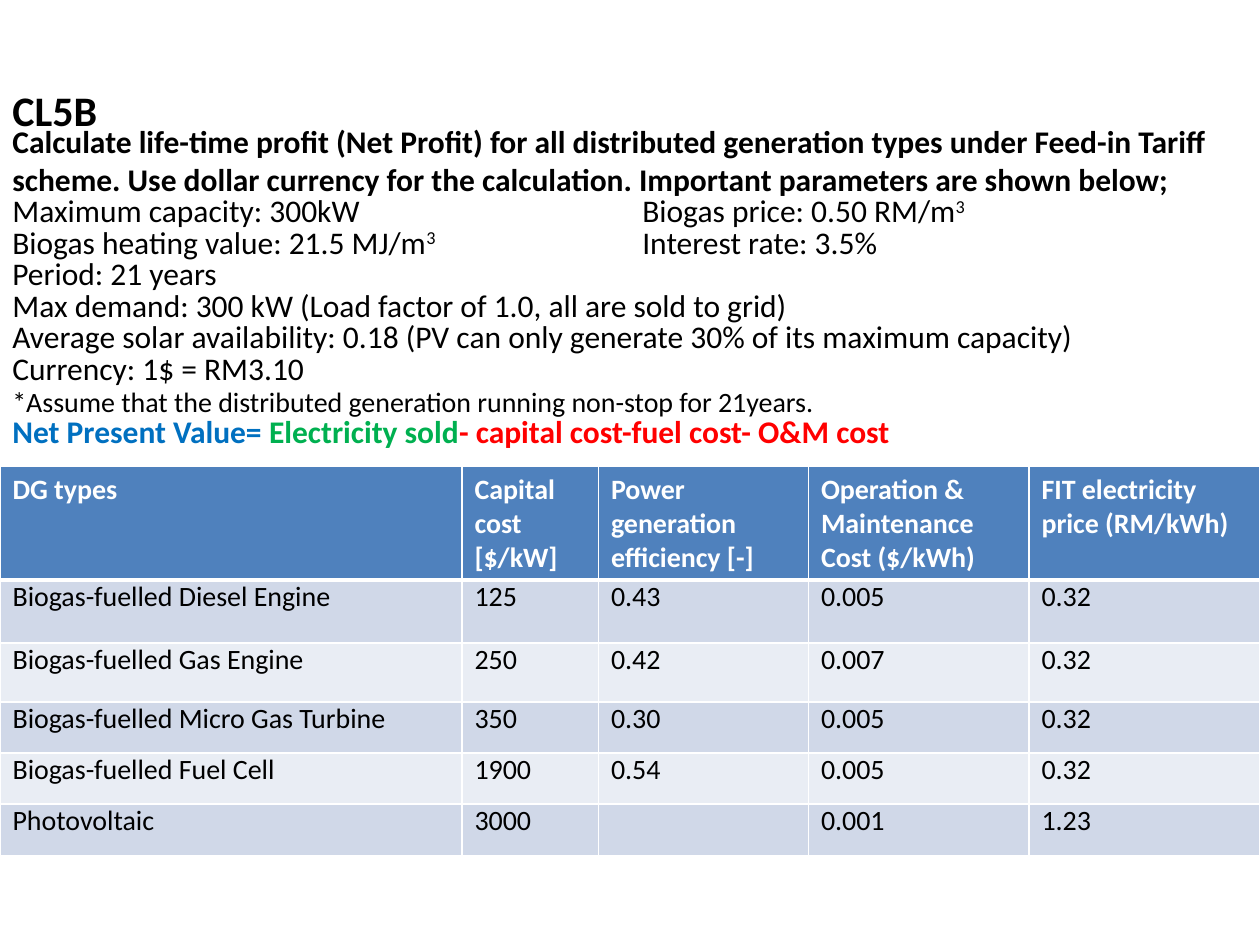
from lxml import etree
from pptx import Presentation
from pptx.dml.color import RGBColor
from pptx.enum.text import MSO_ANCHOR
from pptx.oxml.ns import qn
from pptx.util import Pt

TOP, MIDDLE = MSO_ANCHOR.TOP, MSO_ANCHOR.MIDDLE

BLACK = RGBColor(0x00, 0x00, 0x00)
WHITE = RGBColor(0xFF, 0xFF, 0xFF)
BLUE = RGBColor(0x00, 0x70, 0xC0)
GREEN = RGBColor(0x00, 0xB0, 0x50)
RED = RGBColor(0xFF, 0x00, 0x00)
HEADER_FILL = RGBColor(0x4F, 0x81, 0xBD)
BAND_FILLS = (RGBColor(0xD0, 0xD8, 0xE8), RGBColor(0xE9, 0xED, 0xF4))

SLIDE_WIDTH, SLIDE_HEIGHT = 720, 540
SECOND_COLUMN = 360
HEADER_RULE = 3


class SlideBuilder:
    """Holds the text style and the slide being filled."""

    def __init__(self, slide, font="Calibri"):
        self.slide = slide
        self.font = font

    def run(self, paragraph, text, superscript=False, **formats):
        run = paragraph.add_run()
        run.text = text
        values = {"name": self.font, "size": 18, "bold": False, "color": BLACK, **formats}
        run.font.color.rgb = values.pop("color")
        values["size"] = Pt(values["size"])
        for attribute, value in values.items():
            setattr(run.font, attribute, value)
        if superscript:
            run._r.get_or_add_rPr().set("baseline", "30000")

    def tab_stop(self, paragraph, position):
        stops = etree.SubElement(paragraph._p.get_or_add_pPr(), qn("a:tabLst"))
        etree.SubElement(stops, qn("a:tab"), pos=str(Pt(position)), algn="l")

    def text(self, left, top, width, height, paragraphs, anchor):
        """Each paragraph is a line spacing (or None) and its (text, formats) runs."""
        frame = self.slide.shapes.add_textbox(
            Pt(left), Pt(top), Pt(width), Pt(height)).text_frame
        frame.word_wrap = True
        frame.vertical_anchor = anchor
        for index, (spacing, runs) in enumerate(paragraphs):
            paragraph = frame.add_paragraph() if index else frame.paragraphs[0]
            if spacing:
                paragraph.line_spacing = Pt(spacing)
            if any("\t" in text for text, _ in runs):
                self.tab_stop(paragraph, SECOND_COLUMN)
            for text, formats in runs:
                self.run(paragraph, text, **formats)

    def borders(self, cell, top=1, bottom=1):
        properties = cell._tc.get_or_add_tcPr()
        sides = {"a:lnL": 1, "a:lnR": 1, "a:lnT": top, "a:lnB": bottom}
        for index, (side, width) in enumerate(sides.items()):
            line = etree.Element(qn(side), w=str(Pt(width)))
            fill = etree.SubElement(line, qn("a:solidFill"))
            etree.SubElement(fill, qn("a:srgbClr"), val=str(WHITE))
            properties.insert(index, line)

    def table(self, left, top, height, column_widths, row_heights, rows):
        frame = self.slide.shapes.add_table(
            len(rows), len(column_widths), Pt(left), Pt(top),
            Pt(sum(column_widths)), Pt(height))
        table = frame.table
        for column, width in zip(table.columns, column_widths):
            column.width = Pt(width)
        for row, row_height in zip(table.rows, row_heights):
            row.height = Pt(row_height)
        # The header row grows to fit its three lines of text
        frame.height = Pt(height)
        for r, values in enumerate(rows):
            header = r == 0
            for c, value in enumerate(values):
                cell = table.cell(r, c)
                cell.fill.solid()
                cell.fill.fore_color.rgb = HEADER_FILL if header else BAND_FILLS[(r - 1) % 2]
                self.borders(cell, top=HEADER_RULE if r == 1 else 1,
                             bottom=HEADER_RULE if header else 1)
                paragraph = cell.text_frame.paragraphs[0]
                if not header:
                    paragraph.line_spacing = Pt(16)
                if value:
                    self.run(paragraph, value, size=16, bold=header,
                             color=WHITE if header else BLACK)


def main():
    presentation = Presentation()
    presentation.slide_width = Pt(SLIDE_WIDTH)
    presentation.slide_height = Pt(SLIDE_HEIGHT)
    builder = SlideBuilder(presentation.slides.add_slide(presentation.slide_layouts[6]))

    # Title
    builder.text(0, 44.6, 733, 36, [(None, [("CL5B", {"size": 24, "bold": True})])], MIDDLE)

    # Task, parameters and formula
    task = ("Calculate life-time profit (Net Profit) for all distributed generation types "
            "under Feed-in Tariff scheme. Use dollar currency for the calculation. "
            "Important parameters are shown below;")
    cubed = ("3", {"superscript": True})
    parameters = [
        [("Maximum capacity: 300kW\tBiogas price: 0.50 RM/m", {}), cubed],
        [("Biogas heating value: 21.5 MJ/m", {}), cubed, ("\tInterest rate: 3.5%", {})],
        [("Period: 21 years", {})],
        [("Max demand: 300 kW (Load factor of 1.0, all are sold to grid)", {})],
        [("Average solar availability: 0.18 (PV can only generate 30% of its maximum capacity)",
          {})],
        [("Currency: 1$ = RM3.10", {})],
        [("*Assume that the distributed generation running non-stop for 21years.",
          {"size": 16})],
        [("Net Present Value= ", {"bold": True, "color": BLUE}),
         ("Electricity sold", {"bold": True, "color": GREEN}),
         ("- capital cost-fuel cost- O&M cost", {"bold": True, "color": RED})],
    ]
    builder.text(0, 66.2, SLIDE_WIDTH, 240,
                 [(None, [(task, {"bold": True})])] + [(18, runs) for runs in parameters], TOP)

    # Generation types
    builder.table(
        0, 266.6, 222, [264, 78, 120, 126, 132], [29.5, 36, 33.75, 29.2, 29.2, 29.2],
        [
            ("DG types", "Capital cost [$/kW]", "Power generation efficiency [-]",
             "Operation & Maintenance Cost ($/kWh)", "FIT electricity price (RM/kWh)"),
            ("Biogas-fuelled Diesel Engine", "125", "0.43", "0.005", "0.32"),
            ("Biogas-fuelled Gas Engine", "250", "0.42", "0.007", "0.32"),
            ("Biogas-fuelled Micro Gas Turbine", "350", "0.30", "0.005", "0.32"),
            ("Biogas-fuelled Fuel Cell", "1900", "0.54", "0.005", "0.32"),
            ("Photovoltaic", "3000", "", "0.001", "1.23"),
        ])

    presentation.save("out.pptx")


if __name__ == "__main__":
    main()
